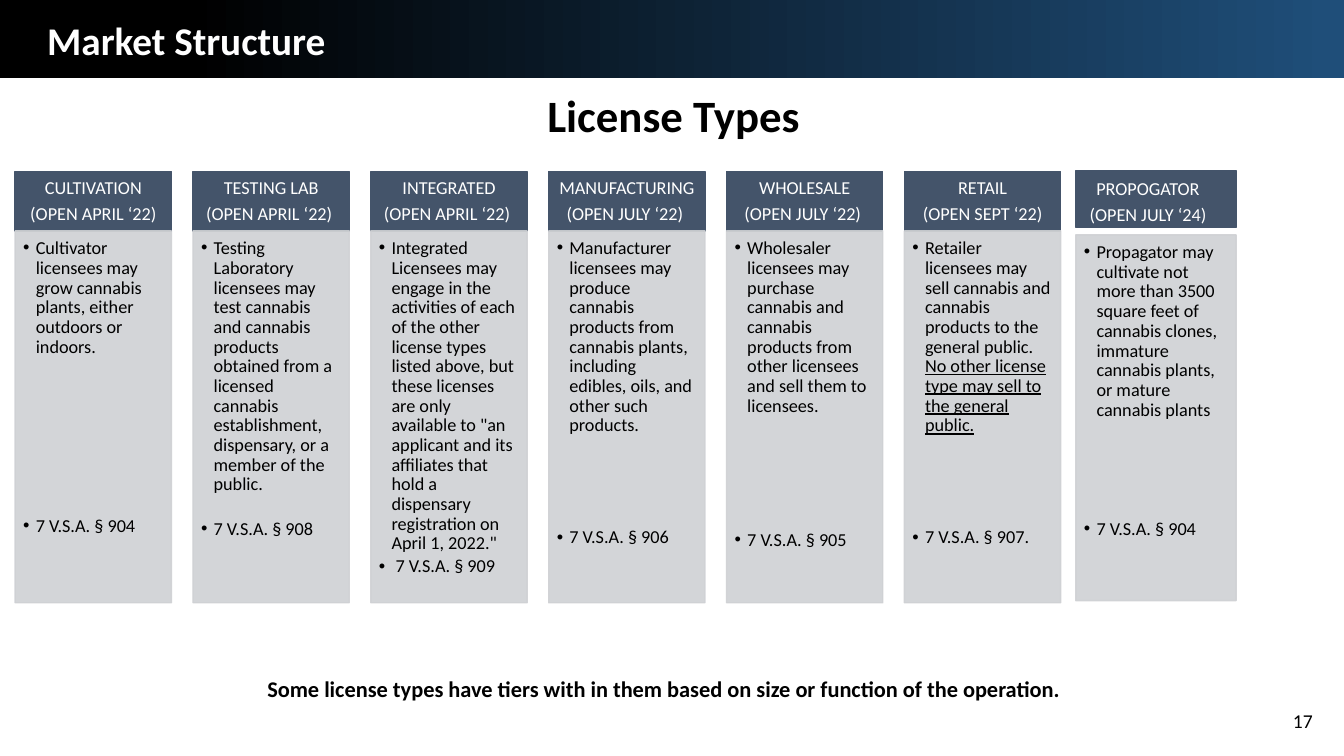
from lxml.etree import SubElement
from pptx import Presentation
from pptx.dml.color import RGBColor
from pptx.enum.shapes import MSO_SHAPE
from pptx.enum.text import MSO_ANCHOR, PP_ALIGN
from pptx.oxml.ns import qn
from pptx.util import Inches, Pt

BLACK, WHITE, SLATE, PALE, NAVY = "000000", "FFFFFF", "44546A", "CFD1D4", "1F4E79"
LEFT, CENTER, RIGHT = PP_ALIGN.LEFT, PP_ALIGN.CENTER, PP_ALIGN.RIGHT
TOP, MIDDLE = MSO_ANCHOR.TOP, MSO_ANCHOR.MIDDLE


def colour(target, value):
    target.rgb = RGBColor.from_string(value)


def write(frame, text, size=13, color=BLACK, bold=False, align=LEFT,
          spacing=1.0, before=0, bullet=False, underlined=""):
    paragraph = frame.add_paragraph() if frame.text else frame.paragraphs[0]
    paragraph.alignment = align
    paragraph.line_spacing = spacing
    paragraph.space_before = Pt(before)
    paragraph.space_after = Pt(0)
    if bullet:
        properties = paragraph._p.get_or_add_pPr()
        properties.set("marL", str(Inches(0.125)))
        properties.set("indent", str(-Inches(0.125)))
        SubElement(properties, qn("a:buFont")).set("typeface", "Arial")
        SubElement(properties, qn("a:buChar")).set("char", "•")
    for part in filter(None, (text, underlined)):
        run = paragraph.add_run()
        run.text = part
        run.font.name = "Calibri"
        run.font.size = Pt(size)
        run.font.bold = bold
        run.font.underline = part == underlined
        run.font.fill.solid()
        colour(run.font.fill.fore_color, color)


deck = Presentation()
deck.slide_width, deck.slide_height = Inches(13.33), Inches(7.5)
slide = deck.slides.add_slide(deck.slide_layouts[6])

banner = slide.shapes.add_shape(MSO_SHAPE.RECTANGLE, 0, 0, deck.slide_width, Inches(0.77))
banner.shadow.inherit = False
banner.line.fill.background()
banner.fill.gradient()
banner.fill.gradient_angle = 0
for stop, position, shade in zip(banner.fill.gradient_stops, (0.14, 0.99), (BLACK, NAVY)):
    stop.position = position
    colour(stop.color, shade)

captions = [
    ("Market Structure", (0.37, 0.11, 5.64, 0.57), TOP, dict(size=28, color=WHITE, bold=True)),
    ("License Types", (5.33, 0.82, 2.91, 0.64), TOP, dict(size=32, bold=True)),
    ("Some license types have tiers with in them based on size or function of the operation. ",
     (0.8, 6.65, 11.62, 0.64), TOP, dict(size=16, bold=True, align=CENTER)),
    ("17", (10.12, 6.95, 3, 0.4), MIDDLE, dict(size=14, align=RIGHT)),
]
for text, place, anchor, style in captions:
    caption = slide.shapes.add_textbox(*map(Inches, place)).text_frame
    caption.word_wrap = True
    caption.vertical_anchor = anchor
    write(caption, text, **style)

licenses = [
    ("CULTIVATION", "(OPEN APRIL ‘22)",
     "Cultivator licensees may grow cannabis plants, either outdoors or indoors.",
     "", "7 V.S.A. § 904", 114),
    ("TESTING LAB", "(OPEN APRIL ‘22) ",
     "Testing Laboratory licensees may test cannabis and cannabis products obtained from a "
     "licensed cannabis establishment, dispensary, or a member of the public.",
     "", "7 V.S.A. § 908", 18),
    ("INTEGRATED", "(OPEN APRIL ‘22) ",
     "Integrated Licensees may engage in the activities of each of the other license types "
     "listed above, but these licenses are only available to \"an applicant and its affiliates "
     "that hold a dispensary registration on April 1, 2022.\"",
     "", " 7 V.S.A. § 909", 2.4),
    ("MANUFACTURING", "(OPEN JULY ‘22) ",
     "Manufacturer licensees may produce cannabis products from cannabis plants, including "
     "edibles, oils, and other such products.",
     "", "7 V.S.A. § 906", 66),
    ("WHOLESALE", "(OPEN JULY ‘22) ",
     "Wholesaler licensees may purchase cannabis and cannabis products from other licensees "
     "and sell them to licensees.",
     "", "7 V.S.A. § 905", 82),
    ("RETAIL", "(OPEN SEPT ‘22)",
     "Retailer licensees may sell cannabis and cannabis products to the general public. ",
     "No other license type may sell to the general public.", "7 V.S.A. § 907.", 66),
    ("PROPOGATOR", "(OPEN JULY ‘24)",
     "Propagator may cultivate not more than 3500 square feet of cannabis clones, immature "
     "cannabis plants, or mature cannabis plants",
     "", "7 V.S.A. § 904", 71),
]
first_left, column_pitch = 0.15, (8.97 - 0.15) / 5

for column, (kind, opening, duties, limit, statute, gap) in enumerate(licenses):
    left = first_left + column * column_pitch
    heading_place, detail_place = (left, 1.7, 1.55, 0.59), (left, 2.29, 1.55, 3.69)
    heading_insets, detail_insets = (0.08, 0.06, 0.08, 0.06), (0.08, 0.08, 0.1, 0.11)
    if kind == "PROPOGATOR":
        heading_place, detail_place = (10.67, 1.69, 1.59, 0.57), (10.67, 2.33, 1.59, 3.63)
        heading_insets, detail_insets = (0.06, 0.12, 0.22, 0.06), (0.08, 0.08, 0.17, 0.12)

    frames = []
    for place, insets, shade, opacity, anchor in (
        (heading_place, heading_insets, SLATE, 100, MIDDLE),
        (detail_place, detail_insets, PALE, 90, TOP),
    ):
        panel = slide.shapes.add_shape(MSO_SHAPE.RECTANGLE, *map(Inches, place))
        panel.shadow.inherit = False
        panel.fill.solid()
        colour(panel.fill.fore_color, shade)
        panel.line.width = Pt(1)
        colour(panel.line.color, shade)
        if opacity < 100:
            for tint in panel._element.spPr.iter(qn("a:srgbClr")):
                SubElement(tint, qn("a:alpha")).set("val", str(opacity * 1000))
        frame = panel.text_frame
        frame.word_wrap = True
        frame.vertical_anchor = anchor
        (frame.margin_left, frame.margin_top,
         frame.margin_right, frame.margin_bottom) = map(Inches, insets)
        frames.append(frame)

    heading, detail = frames
    write(heading, kind, color=WHITE, align=CENTER, spacing=0.9)
    write(heading, opening, color=WHITE, align=CENTER, spacing=0.9, before=4.5)
    write(detail, duties, spacing=0.9, bullet=True, underlined=limit)
    write(detail, statute, spacing=0.9, before=gap, bullet=True)

deck.save("out.pptx")
